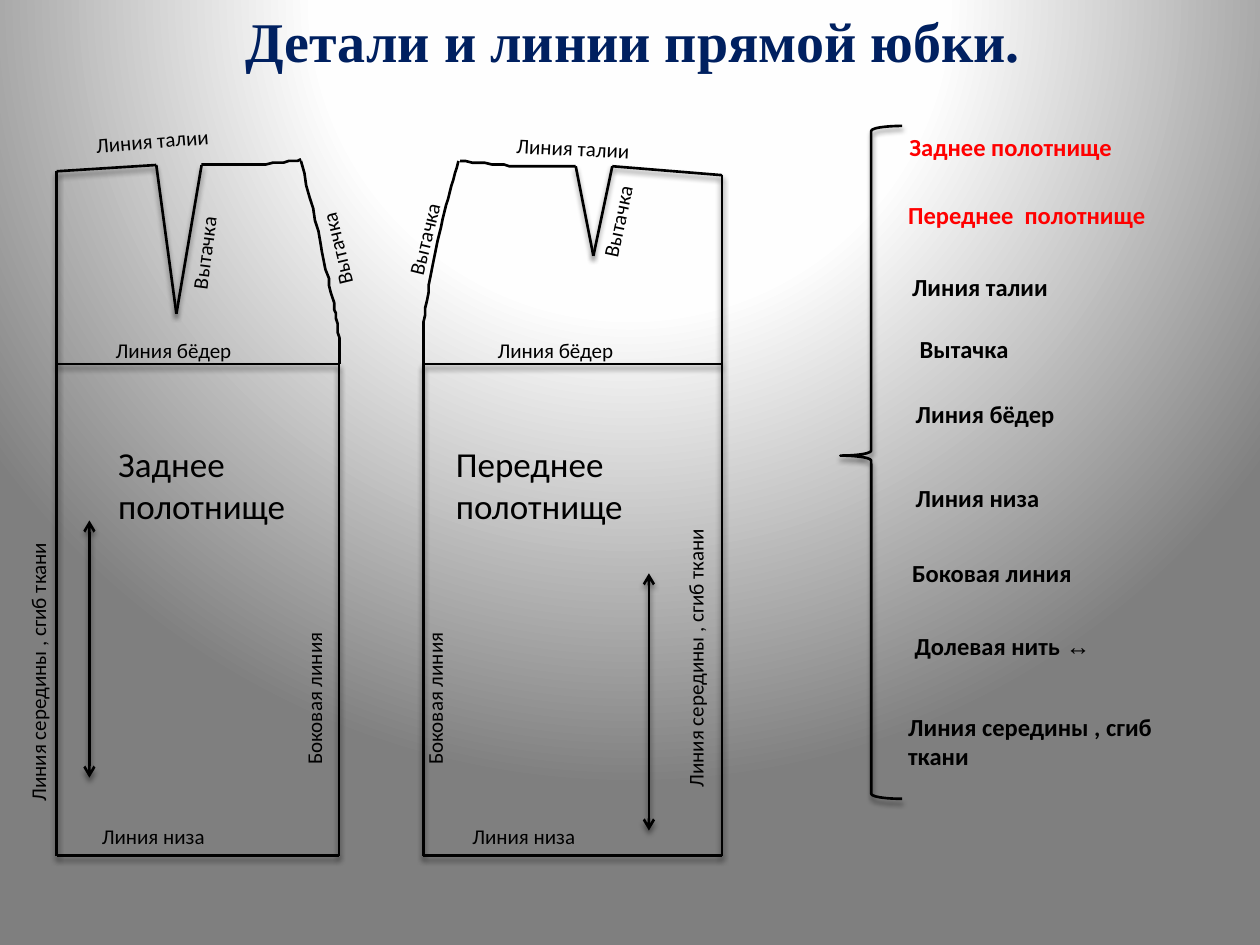
from lxml import etree
from pptx import Presentation
from pptx.dml.color import RGBColor
from pptx.enum import shapes, text
from pptx.oxml import ns, parse_xml
from pptx.util import Pt

COLORS = {"ink": "000000", "title": "002060", "accent": "FF0000",
          "light": "FFFFFF", "middle": "FEFEFE", "dark": "7F7F7F"}
LINE_WIDTH = 1.5
HIP, HEM = 208.1, 488.9
BACK_CENTER, BACK_SIDE = 32.4, 193.7
FRONT_SIDE, FRONT_CENTER = 241.9, 412.6

CURVES = [
    [(172.1, 92.2), (177.8, 115.2), (182.9, 138.2), (186.5, 154.1), (190.1, 169.9),
     (192.2, 178.6), (193, 187.9), (194.4, 196.6), (193.7, 203), (BACK_SIDE, HIP)],
    [(262.1, 92.2), (258.5, 103.7), (254.9, 115.2), (252, 129.6), (249.1, 143.3),
     (244.8, 162.7), (243.4, 175.7), (241.2, 188.6), (241.9, 203.8), (FRONT_SIDE, HIP)],
    [(115.2, 94.3), (124.6, 94.3), (133.2, 94.3), (142.6, 94.3), (151.9, 93.6),
     (167, 92.2), (172.1, 91.4)],
    [(262.8, 92.2), (275, 92.9), (287.3, 94.3), (298.1, 95), (309.6, 95),
     (324.7, 94.3), (329, 95)],
]
OUTLINES = [
    [(115.2, 94.3), (100.8, 179.3), (89.3, 94.3), (BACK_CENTER, 97.9),
     (BACK_CENTER, HEM), (BACK_SIDE, HEM), (BACK_SIDE, HIP), (BACK_CENTER, HIP)],
    [(329, 95), (339.1, 146.2), (349.9, 95), (FRONT_CENTER, 100.1),
     (FRONT_CENTER, HEM), (FRONT_SIDE, HEM), (FRONT_SIDE, HIP), (FRONT_CENTER, HIP)],
]
GRAIN_ARROWS = [(51.1, 297.4), (370.8, 327.6)]
GRAIN_LENGTH = 147

LEVEL_LABELS = [
    ("Линия талии", 47.5, 67.7, 123.8, -4.7),
    ("Линия талии", 288, 74.9, 123.8, 2.9),
    ("Линия бёдер", 59, 189.4, 123.8, 0),
    ("Линия бёдер", 277.2, 189.4, 123.8, 0),
    ("Линия низа", 51.1, 467.3, 123.8, 0),
    ("Линия низа", 262.8, 467.3, 123.8, 0),
    ("Вытачка", 81.4, 125.3, 72.7, 277.5),
    ("Вытачка", 154.1, 123.1, 72.7, 256.3),
    ("Вытачка", 208.1, 117.4, 72.7, 283.8),
    ("Вытачка", 321.8, 111.6, 64.1, 282.1),
]
UPRIGHT_LABELS = [
    ("Линия середины , сгиб ткани", 10.8, 249.1, 216),
    ("Линия середины , сгиб ткани", 386.6, 241.2, 216),
    ("Боковая линия", 168.5, 329, 115.2),
    ("Боковая линия", 237.6, 329, 115.2),
]
PANEL_NAMES = [("Заднее", 60.5, 122.4), ("Переднее", 253.4, 131)]
LEGEND = [
    ("Заднее полотнище", 512.6, 72, 146.2, "accent"),
    ("Переднее  полотнище", 511.9, 110.9, 170.6, "accent"),
    ("Линия талии", 514.1, 151.9, 123.8, "ink"),
    ("Вытачка", 518.4, 187.2, 65.5, "ink"),
    ("Линия бёдер", 516.2, 224.6, 94.3, "ink"),
    ("Линия низа", 516.2, 272.2, 85.7, "ink"),
    ("Боковая линия", 514.1, 315.4, 131.8, "ink"),
    ("Долевая нить ", 515.5, 357.1, 143.3, "ink"),
    ("Линия середины , сгиб ткани", 511.9, 403.2, 165.6, "ink"),
]


def color(name):
    return RGBColor.from_string(COLORS[name])


def set_background(slide):
    stops = "".join(
        f'<a:gs pos="{position}000"><a:srgbClr val="{COLORS[name]}"/></a:gs>'
        for position, name in ((0, "light"), (40, "middle"), (100, "dark")))
    background = parse_xml(
        f'<p:bg {ns.nsdecls("p", "a")}><p:bgPr><a:gradFill rotWithShape="1">'
        f'<a:gsLst>{stops}</a:gsLst><a:path path="circle">'
        '<a:fillToRect l="50000" t="-80000" r="50000" b="180000"/></a:path>'
        '</a:gradFill><a:effectLst/></p:bgPr></p:bg>')
    slide.element.cSld.insert(0, background)


def add_shadow(shape):
    properties = shape._element.spPr
    for effects in properties.findall(ns.qn("a:effectLst")):
        properties.remove(effects)
    properties.append(parse_xml(
        f'<a:effectLst {ns.nsdecls("a")}><a:outerShdw blurRad="38100" dist="30480" '
        f'dir="5400000" rotWithShape="0"><a:srgbClr val="{COLORS["ink"]}">'
        '<a:alpha val="45000"/></a:srgbClr></a:outerShdw></a:effectLst>'))


def format_line(shape):
    shape.line.color.rgb = color("ink")
    shape.line.width = Pt(LINE_WIDTH)


def add_line(slide, start, end, arrows=False):
    line = slide.shapes.add_connector(
        shapes.MSO_CONNECTOR.STRAIGHT, *(Pt(value) for value in (*start, *end)))
    format_line(line)
    if arrows:
        for tag in ("a:headEnd", "a:tailEnd"):
            etree.SubElement(line.line._ln, ns.qn(tag), type="arrow")
    add_shadow(line)


def bezier(controls, t):
    s = 1 - t
    weights = (s ** 3, 3 * s * s * t, 3 * s * t * t, t ** 3)
    return tuple(sum(weight * point[axis] for weight, point in zip(weights, controls))
                 for axis in (0, 1))


def add_curve(slide, points, steps=10):
    vertices = [bezier(points[first:first + 4], step / steps)
                for first in range(0, len(points) - 1, 3)
                for step in range(1, steps + 1)]
    builder = slide.shapes.build_freeform(*points[0], scale=Pt(1))
    builder.add_line_segments(vertices, close=False)
    curve = builder.convert_to_shape()
    curve.fill.background()
    curve.shadow.inherit = False
    format_line(curve)


def add_brace(slide):
    brace = slide.shapes.add_shape(
        shapes.MSO_SHAPE.LEFT_BRACE, Pt(480.2), Pt(72), Pt(35.3), Pt(384.5))
    brace.adjustments[0], brace.adjustments[1] = 0.08, 0.49
    brace.fill.background()
    format_line(brace)
    add_shadow(brace)


def add_run(paragraph, content, size, name="ink", bold=False, font="Calibri"):
    run = paragraph.add_run()
    run.text = content
    run.font.size = Pt(size)
    run.font.name = font
    run.font.bold = bold
    run.font.color.rgb = color(name)


def add_text(slide, lines, left, top, width, height, size, name="ink", bold=False):
    box = slide.shapes.add_textbox(Pt(left), Pt(top), Pt(width), Pt(height))
    frame = box.text_frame
    frame.word_wrap = True
    for index, line in enumerate(lines):
        paragraph = frame.add_paragraph() if index else frame.paragraphs[0]
        add_run(paragraph, line, size, name, bold)
    return box


def set_title(slide):
    title = slide.shapes.title
    title.left, title.top, title.width, title.height = Pt(133.2), 0, Pt(462.2), Pt(46)
    frame = title.text_frame
    frame.word_wrap = False
    frame.auto_size = text.MSO_AUTO_SIZE.SHAPE_TO_FIT_TEXT
    frame.vertical_anchor = text.MSO_ANCHOR.TOP
    paragraph = frame.paragraphs[0]
    paragraph.alignment = text.PP_ALIGN.LEFT
    add_run(paragraph, "Детали и линии прямой юбки.", 32, "title", True, "Times New Roman")


def add_labels(slide):
    for content, left, top, width, angle in LEVEL_LABELS:
        add_text(slide, [content], left, top, width, 21.8, 12).rotation = angle
    for content, left, top, height in UPRIGHT_LABELS:
        box = add_text(slide, [content], left, top, 29, height, 12)
        box.text_frame._txBody.bodyPr.set("vert", "vert270")
    for content, left, width in PANEL_NAMES:
        add_text(slide, [content, "полотнище"], left, 249.1, width, 55.7, 20)


def add_legend(slide):
    for content, left, top, width, name in LEGEND:
        box = add_text(slide, [content], left, top, width, 24.2, 14, name, True)
        if content.startswith("Долевая"):
            add_run(box.text_frame.paragraphs[0], "↔", 14, name, True, "Times New Roman")


def main():
    presentation = Presentation()
    presentation.slide_width, presentation.slide_height = Pt(720), Pt(540)
    slide = presentation.slides.add_slide(presentation.slide_layouts[5])
    set_background(slide)
    set_title(slide)
    for points in CURVES:
        add_curve(slide, points)
    for points in OUTLINES:
        for start, end in zip(points, points[1:]):
            add_line(slide, start, end)
    for x, top in GRAIN_ARROWS:
        add_line(slide, (x, top), (x, top + GRAIN_LENGTH), arrows=True)
    add_labels(slide)
    add_legend(slide)
    add_brace(slide)
    presentation.save("out.pptx")


if __name__ == "__main__":
    main()
